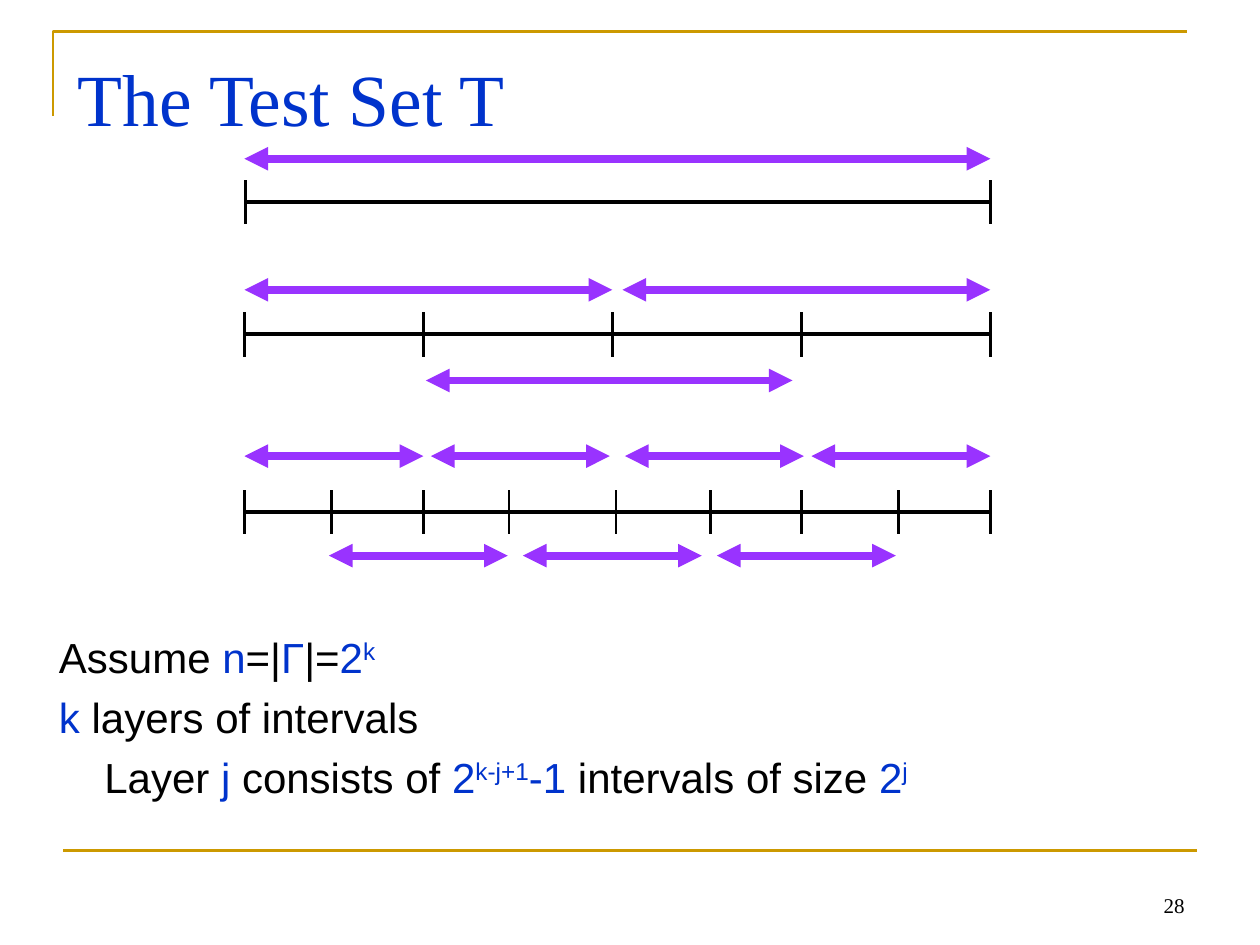
from lxml import etree
from pptx import Presentation
from pptx.dml.color import RGBColor
from pptx.enum.shapes import MSO_CONNECTOR
from pptx.enum.text import MSO_ANCHOR, PP_ALIGN
from pptx.oxml.ns import qn
from pptx.util import Pt

PX = 9144  # 100 px to the inch
STRAIGHT = MSO_CONNECTOR.STRAIGHT
TOP, MIDDLE, BOTTOM = MSO_ANCHOR.TOP, MSO_ANCHOR.MIDDLE, MSO_ANCHOR.BOTTOM
LEFT, RIGHT = PP_ALIGN.LEFT, PP_ALIGN.RIGHT
BLACK, BLUE, PURPLE, GOLD = "000000", "0033CC", "9933FF", "CC9900"
SERIF, SANS = "Times New Roman", "Arial"


def px(*lengths):
    return [n * PX for n in lengths]


def rgb(color):
    return RGBColor.from_string(color)


def add_line(shapes, x1, y1, x2, y2, color, width, arrows=False):
    sp = shapes.add_connector(STRAIGHT, *px(x1, y1, x2, y2))
    sp.line.color.rgb = rgb(color)
    sp.line.width = Pt(width)
    if arrows:
        ln = sp.line._get_or_add_ln()
        for end in ("a:headEnd", "a:tailEnd"):
            etree.SubElement(ln, qn(end), type="triangle")
    etree.SubElement(sp._element.spPr, qn("a:effectLst"))


def add_text(slide, box, anchor):
    tf = slide.shapes.add_textbox(*px(*box)).text_frame
    tf.word_wrap = True
    tf.vertical_anchor = anchor
    return tf


def set_line(tf, text, font, size, color, align):
    p = tf.paragraphs[0]
    p.text = text
    p.alignment = align
    p.font.name, p.font.size = font, Pt(size)
    p.font.color.rgb = rgb(color)


def add_frame(slide, left, top):
    """Gold corner above the title and gold rule above the footer."""
    builder = slide.shapes.build_freeform(left, top + 67, scale=PX)
    builder.add_line_segments([(left, top), (left + 900, top)], close=False)
    sp = builder.convert_to_shape()
    sp.shadow.inherit = False
    sp.fill.background()
    sp.line.color.rgb = rgb(GOLD)
    sp.line.width = Pt(1.5)
    add_line(slide.shapes, left + 8, top + 650, left + 908, top + 650, GOLD, 1.5)


def add_layer(slide, left, axis_y, width, ticks, arrow_rows):
    """Axis with ticks; each arrow row is (offset from axis, size, starts)."""
    shapes = slide.shapes.add_group_shape().shapes
    add_line(shapes, left, axis_y, left + width, axis_y, BLACK, 2.25)
    for x in ticks:
        add_line(shapes, left + x, axis_y - 17, left + x, axis_y + 18, BLACK, 1.5)
    for dy, size, starts in arrow_rows:
        for x in starts:
            add_line(shapes, left + x, axis_y + dy, left + x + size, axis_y + dy,
                     PURPLE, 4.5, arrows=True)


def add_body(slide, box, lines):
    """Each line is (indent, runs); each run is (text, color, raised)."""
    tf = add_text(slide, box, TOP)
    for i, (indent, runs) in enumerate(lines):
        p = tf.add_paragraph() if i else tf.paragraphs[0]
        p._p.get_or_add_pPr().set("marL", str(indent * PX))
        p.space_before = Pt(5.5)
        p.font.name, p.font.size = SANS, Pt(24)
        for text, color, raised in runs:
            r = p.add_run()
            r.text = text
            r.font.color.rgb = rgb(color)
            if raised:
                r._r.get_or_add_rPr().set("baseline", "30000")


def plain(text):
    return text, BLACK, False


def symbol(text):
    return text, BLUE, False


def power(text):
    return text, BLUE, True


LAYERS = [
    (160, [1, 592], [(-34, 592, [0])]),
    (265, [0, 142, 292, 442, 592], [(-35, 292, [0, 300]), (37, 291, [144])]),
    (406, [0, 69, 142, 210, 295, 370, 442, 519, 592],
     [(-44, 142, [0, 148, 302, 450]), (35, 142, [67, 221, 375])]),
]
BODY = [
    (37, [plain("Assume "), symbol("n"), plain("=|"), symbol("Γ"), plain("|="),
          symbol("2"), power("k")]),
    (37, [symbol("k"), plain(" layers of intervals")]),
    (73, [plain("Layer "), symbol("j"), plain(" consists of "), symbol("2"),
          power("k-j+1"), symbol("-1"), plain(" intervals of size "),
          symbol("2"), power("j")]),
]


def main():
    prs = Presentation()
    prs.slide_width, prs.slide_height = px(1000, 750)
    slide = prs.slides.add_slide(prs.slide_layouts[6])
    add_frame(slide, 42, 25)
    set_line(add_text(slide, (717, 683, 233, 50), BOTTOM), "28", SERIF, 12, BLACK, RIGHT)
    set_line(add_text(slide, (52, 31, 900, 93), MIDDLE), "The Test Set T",
             SERIF, 42, BLUE, LEFT)
    add_body(slide, (0, 496, 900, 333), BODY)
    for axis_y, ticks, arrow_rows in LAYERS:
        add_layer(slide, 194, axis_y, 592, ticks, arrow_rows)
    prs.save("out.pptx")


if __name__ == "__main__":
    main()
